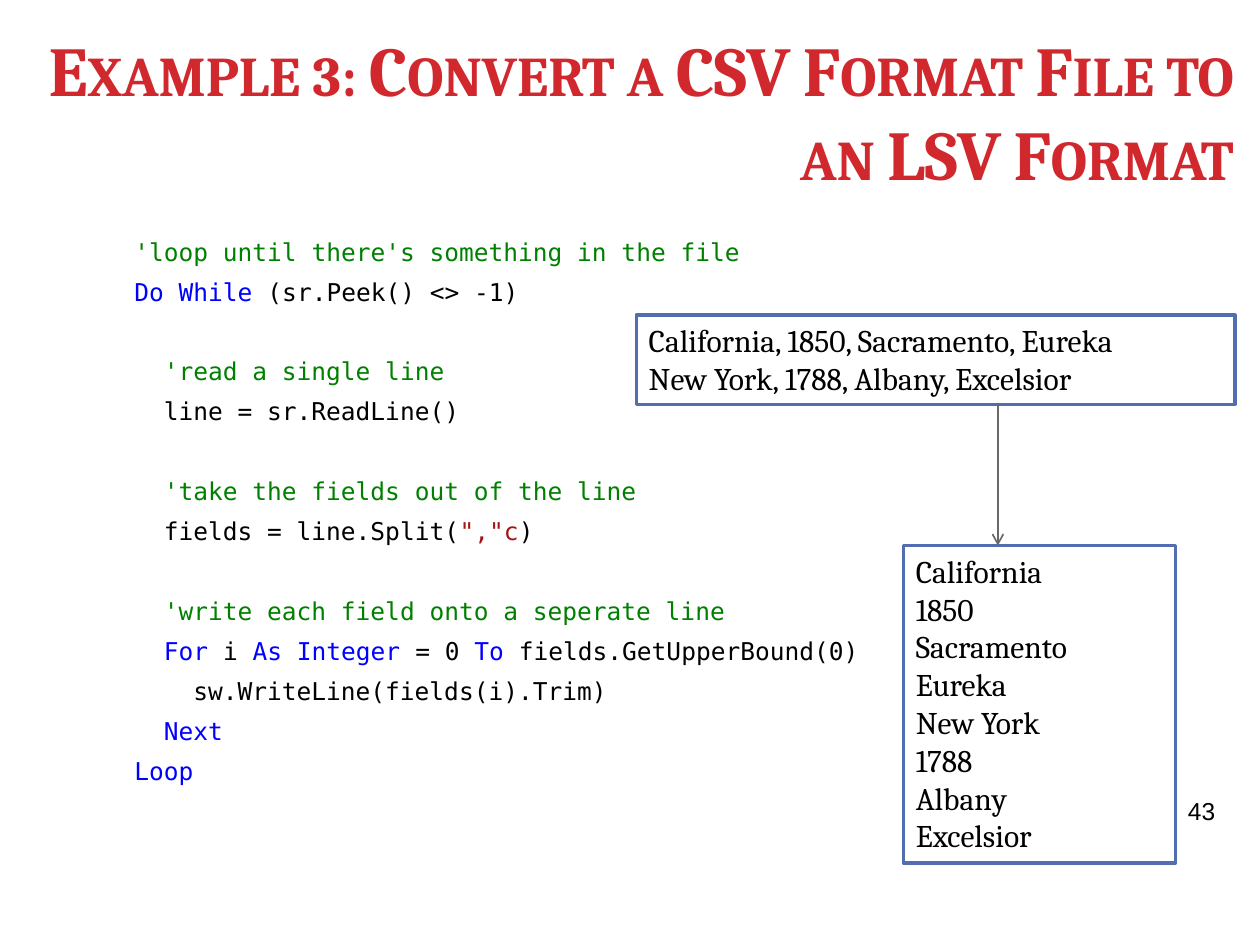
from lxml.etree import SubElement
from pptx import Presentation
from pptx.dml.color import RGBColor
from pptx.enum.shapes import MSO_CONNECTOR, MSO_SHAPE
from pptx.enum.text import MSO_ANCHOR, PP_ALIGN
from pptx.oxml.ns import qn
from pptx.util import Inches, Pt

RED = RGBColor(0xD1, 0x28, 0x2E)
BLACK = RGBColor(0, 0, 0)
WHITE = RGBColor(0xFF, 0xFF, 0xFF)
GREEN = RGBColor(0, 0x80, 0)
BLUE = RGBColor(0, 0, 0xFF)
MAROON = RGBColor(0xA3, 0x15, 0x15)
FRAME = RGBColor(0x52, 0x6D, 0xB0)
GREY = RGBColor(0x68, 0x68, 0x68)

CHAR = 0.117  # width of one code character, in inches
GAP, BREAK = 6, 28.8  # points before a line, and before a new code block

# Each code line: indent in characters, points before, coloured pieces
CODE = [
    (4, GAP, [("'loop until there's something in the file", GREEN)]),
    (4, GAP, [("Do While", BLUE), (" (sr.Peek() <> -1)", BLACK)]),
    (6, BREAK, [("'read a single line", GREEN)]),
    (6, GAP, [("line = sr.ReadLine()", BLACK)]),
    (6, BREAK, [("'take the fields out of the line", GREEN)]),
    (6, GAP, [("fields = line.Split(", BLACK), ('","c', MAROON), (")", BLACK)]),
    (6, BREAK, [("'write each field onto a seperate line", GREEN)]),
    (6, GAP, [("For ", BLUE), ("i ", BLACK), ("As Integer", BLUE),
              (" = 0 ", BLACK), ("To ", BLUE),
              ("fields.GetUpperBound(0)", BLACK)]),
    (8, GAP, [("sw.WriteLine(fields(i).Trim)", BLACK)]),
    (6, GAP, [("Next", BLUE)]),
    (4, GAP, [("Loop", BLUE)]),
]
STATES = ["California, 1850, Sacramento, Eureka",
          "New York, 1788, Albany, Excelsior"]


def style(run, face, size, color, bold=False):
    font = run.font
    font.name, font.size, font.bold = face, Pt(size), bold
    font.color.rgb = color


def add_text(slide, box):
    frame = slide.shapes.add_textbox(*map(Inches, box)).text_frame
    frame.word_wrap = True
    return frame


def add_title(slide, box, text):
    frame = add_text(slide, box)
    frame.vertical_anchor = MSO_ANCHOR.BOTTOM
    frame.text = text
    para = frame.paragraphs[0]
    para.alignment = PP_ALIGN.RIGHT
    run = para.runs[0]
    style(run, "Cambria", 40, RED, True)
    run.font._element.set("cap", "small")


def add_code(slide, box):
    frame = add_text(slide, box)
    for i, (indent, gap, parts) in enumerate(CODE):
        para = frame.add_paragraph() if i else frame.paragraphs[0]
        para.space_before = Pt(gap)
        para._p.get_or_add_pPr().set("marL", str(Inches(indent * CHAR)))
        for text, color in parts:
            run = para.add_run()
            run.text = text
            style(run, "DejaVu Sans Mono", 14, color)


def add_number(slide, box, text):
    frame = add_text(slide, box)
    frame.text = text
    style(frame.paragraphs[0].runs[0], "Arial", 14, BLACK)


def add_panel(slide, box, lines):
    shape = slide.shapes.add_shape(MSO_SHAPE.RECTANGLE, *map(Inches, box))
    shape.shadow.inherit = False
    shape.fill.solid()
    shape.fill.fore_color.rgb = WHITE
    shape.line.color.rgb = FRAME
    shape.line.width = Pt(2)
    frame = shape.text_frame
    frame.word_wrap = True
    frame.vertical_anchor = MSO_ANCHOR.TOP
    frame.text = "\n".join(lines)
    for para in frame.paragraphs:
        para.alignment = PP_ALIGN.LEFT
        style(para.runs[0], "Cambria", 18, BLACK)
    return shape


def add_arrow(slide, x, upper, lower):
    line = slide.shapes.add_connector(
        MSO_CONNECTOR.STRAIGHT, Inches(x), upper.top + upper.height,
        Inches(x), lower.top)
    line.line.color.rgb = GREY
    line.line.width = Pt(1)
    SubElement(line.line._get_or_add_ln(), qn("a:tailEnd"), type="arrow")
    SubElement(line._element.spPr, qn("a:effectLst"))


def main():
    deck = Presentation()
    deck.slide_width, deck.slide_height = Inches(10), Inches(7.5)
    slide = deck.slides.add_slide(deck.slide_layouts[6])

    # Heading, code and page number
    add_title(slide, (0.17, 0.14, 9.72, 1.45),
              "Example 3: Convert a CSV Format File to an LSV Format")
    add_code(slide, (0.5, 1.83, 8.28, 5.26))
    add_number(slide, (9.33, 6.27, 0.67, 0.57), "43")

    # Comma-separated rows turned into one field per line;
    # the column ends left of the page number
    fields = [field for row in STATES for field in row.split(", ")]
    rows = add_panel(slide, (5.05, 2.5, 4.75, 0.71), STATES)
    column = add_panel(slide, (7.17, 4.33, 2.16, 2.52), fields)
    add_arrow(slide, 7.92, rows, column)

    deck.save("out.pptx")


if __name__ == "__main__":
    main()
